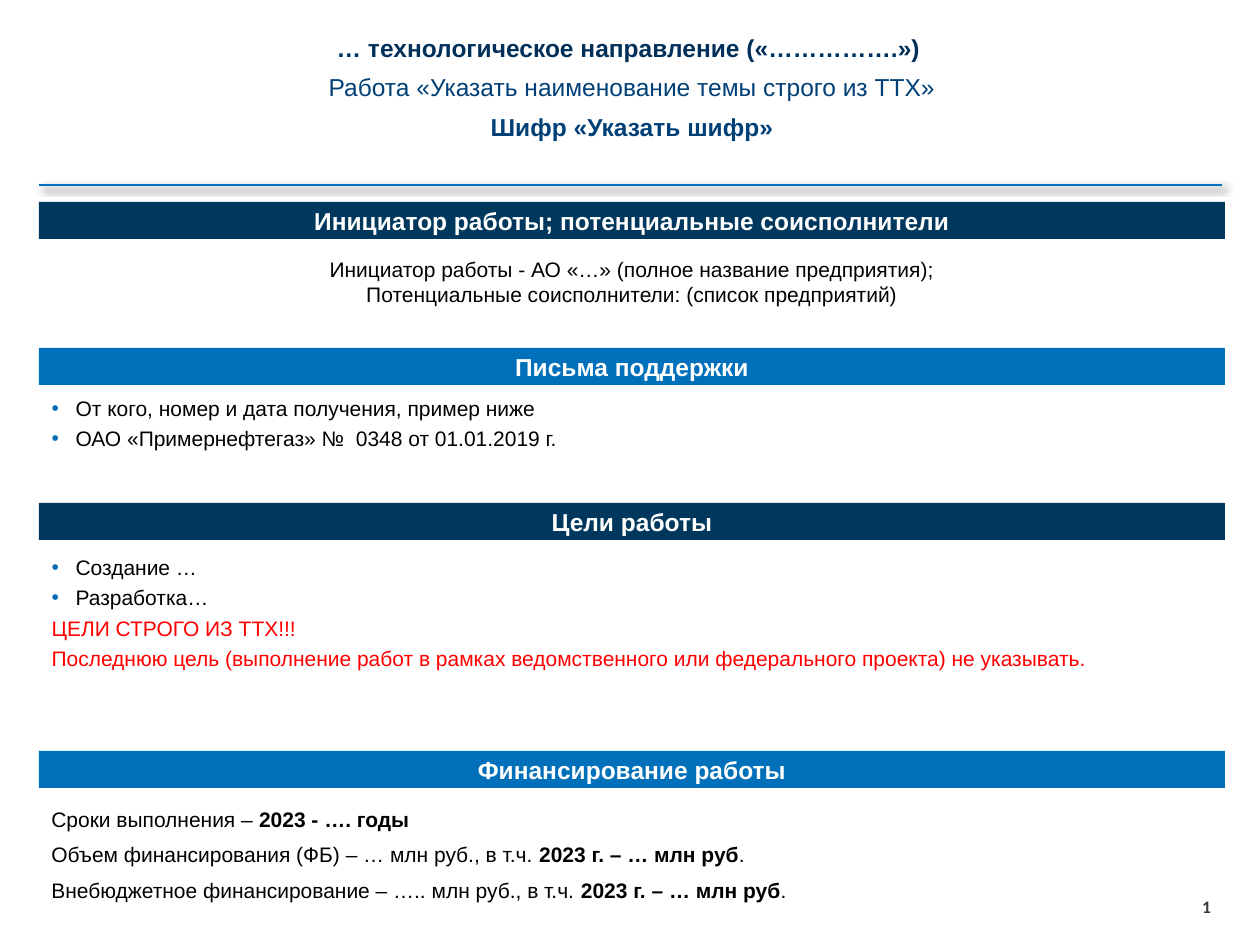
from lxml.etree import SubElement
from pptx import Presentation
from pptx.dml.color import RGBColor
from pptx.enum.shapes import MSO_CONNECTOR, MSO_SHAPE
from pptx.enum.text import MSO_ANCHOR, MSO_AUTO_SIZE, PP_ALIGN
from pptx.oxml.ns import qn
from pptx.util import Emu, Pt

SCALE = 914400 / 126
COLORS = {
    "navy": "00385D", "blue": "0070BA", "bullet": "016DB7", "title": "003059",
    "theme": "004077", "text": "000000", "warning": "FF0000",
    "white": "FFFFFF", "number": "3C3C3C",
}


def px(length):
    """Turn px into EMU."""
    return Emu(round(length * SCALE))


def color(name):
    """Look up a palette colour."""
    return RGBColor.from_string(COLORS[name])


def place(shape, box):
    """Move and size a shape to a px box."""
    shape.left, shape.top, shape.width, shape.height = map(px, box)


def set_frame(frame, anchor=MSO_ANCHOR.TOP, inset=None):
    """Set wrapping, anchor and, if given, one inset for all sides."""
    frame.word_wrap = True
    frame.auto_size = MSO_AUTO_SIZE.NONE
    frame.vertical_anchor = anchor
    if inset is not None:
        frame.margin_left = frame.margin_right = px(inset)
        frame.margin_top = frame.margin_bottom = px(inset)
    return frame


def set_bullet(paragraph, bulleted):
    """Give a paragraph a coloured bullet or none at all."""
    properties = paragraph._p.get_or_add_pPr()
    properties.set("marL", str(px(24 if bulleted else 0)))
    properties.set("indent", str(px(-24 if bulleted else 0)))
    if bulleted:
        tint = SubElement(properties, qn("a:buClr"))
        SubElement(tint, qn("a:srgbClr")).set("val", COLORS["bullet"])
        SubElement(properties, qn("a:buFont")).set("typeface", "Arial")
        SubElement(properties, qn("a:buChar")).set("char", "•")
    else:
        SubElement(properties, qn("a:buNone"))


def add_run(paragraph, text, size=12, tint="text", bold=False, font="Arial"):
    """Append one formatted run."""
    run = paragraph.add_run()
    run.text = text
    run.font.name, run.font.size, run.font.bold = font, Pt(size), bold
    run.font.color.rgb = color(tint)
    return run


def write(frame, lines, align=PP_ALIGN.LEFT, after=0, **style):
    """Write lines, each a list of (text, bold) runs."""
    for index, line in enumerate(lines):
        paragraph = frame.add_paragraph() if index else frame.paragraphs[0]
        paragraph.alignment = align
        paragraph.space_after = Pt(after if index < len(lines) - 1 else 0)
        for text, bold in line:
            add_run(paragraph, text, bold=bold, **style)


def add_text(slide, box, inset=None):
    """Add a wrapped text box and return its frame."""
    return set_frame(slide.shapes.add_textbox(*map(px, box)).text_frame, inset=inset)


def add_heading(slide, box):
    """Build the title, the theme lines and the shadowed rule."""
    left, top, width, height = box
    title = slide.shapes.title
    place(title, (left, top, width - 7, 37))
    write(set_frame(title.text_frame, MSO_ANCHOR.BOTTOM, 0),
          [[("… технологическое направление («…………….»)", True)]],
          PP_ALIGN.CENTER, size=14, tint="title")
    write(add_text(slide, (left, top + 41, width, 83)),
          [[("Работа «Указать наименование темы строго из ТТХ»", False)],
           [("Шифр «Указать шифр»", True)]],
          PP_ALIGN.CENTER, after=6, size=14, tint="theme")
    bottom = top + height
    rule = slide.shapes.add_connector(
        MSO_CONNECTOR.STRAIGHT, px(left), px(bottom), px(left + width - 3), px(bottom))
    rule.line.color.rgb = color("blue")
    rule.line.width = Pt(1.5)
    effects = SubElement(rule._element.spPr, qn("a:effectLst"))
    shadow = SubElement(effects, qn("a:outerShdw"), blurRad=str(Pt(4)),
                        dist=str(Pt(3)), dir="2700000", algn="tl", rotWithShape="0")
    shade = SubElement(shadow, qn("a:srgbClr"), val=COLORS["text"])
    SubElement(shade, qn("a:alpha"), val="40000")


def add_band(slide, box, heading, fill):
    """Build the coloured heading band at the top of a section box."""
    left, top, width, _ = box
    band = slide.shapes.add_shape(MSO_SHAPE.RECTANGLE, *map(px, (left, top, width, 37)))
    band.shadow.inherit = False
    band.fill.solid()
    band.fill.fore_color.rgb = color(fill)
    band.line.fill.background()
    write(set_frame(band.text_frame, MSO_ANCHOR.MIDDLE), [[(heading, True)]],
          PP_ALIGN.CENTER, size=14, tint="white")


def add_text_section(slide, box, heading, fill, offset, lines, **style):
    """Build a band with plain text below it."""
    left, top, width, height = box
    add_band(slide, box, heading, fill)
    write(add_text(slide, (left, top + offset, width, height - offset)), lines, **style)


def add_list_section(slide, box, heading, fill, offset, body, items, warnings=()):
    """Build a band with a list placeholder below it."""
    left, top, width, height = box
    add_band(slide, box, heading, fill)
    place(body, (left, top + offset, width, height - offset))
    frame = set_frame(body.text_frame)
    for index, text in enumerate([*items, *warnings]):
        paragraph = frame.add_paragraph() if index else frame.paragraphs[0]
        bulleted = index < len(items)
        set_bullet(paragraph, bulleted)
        paragraph.alignment = PP_ALIGN.JUSTIFY
        paragraph.space_before, paragraph.space_after = Pt(0), Pt(3)
        add_run(paragraph, text, tint="text" if bulleted else "warning")


def add_slide_number(slide, box):
    """Build the slide number as a live field."""
    paragraph = add_text(slide, box, inset=0).paragraphs[0]
    field = add_run(paragraph, "1", 10, "number", True, "Calibri")._r
    field.tag = qn("a:fld")
    field.set("id", "{B6F15528-21DE-4FAA-801E-634DDDAF4B2B}")
    field.set("type", "slidenum")


def main():
    """Build and save the slide."""
    deck = Presentation()
    deck.slide_width, deck.slide_height = px(1260), px(945)
    slide = deck.slides.add_slide(deck.slide_layouts[3])
    letters, goals = slide.placeholders[1], slide.placeholders[2]
    left, width = 39, 1186

    add_heading(slide, (left, 25, width, 160))
    add_text_section(
        slide, (left, 202, width, 110),
        "Инициатор работы; потенциальные соисполнители", "navy", 48,
        [[("Инициатор работы - АО «…» (полное название предприятия);", False)],
         [("Потенциальные соисполнители: (список предприятий)", False)]],
        align=PP_ALIGN.CENTER)
    add_list_section(
        slide, (left, 348, width, 110), "Письма поддержки", "blue", 41, letters,
        ["От кого, номер и дата получения, пример ниже",
         "ОАО «Примернефтегаз» №  0348 от 01.01.2019 г."])
    add_list_section(
        slide, (left, 503, width, 176), "Цели работы", "navy", 45, goals,
        ["Создание …", "Разработка…"],
        ["ЦЕЛИ СТРОГО ИЗ ТТХ!!!",
         "Последнюю цель (выполнение работ в рамках ведомственного "
         "или федерального проекта) не указывать."])
    year_share = [("2023 г. – … млн руб", True), (".", False)]
    add_text_section(
        slide, (left, 751, width, 160), "Финансирование работы", "blue", 49,
        [[("Сроки выполнения – ", False), ("2023 - …. годы", True)],
         [("Объем финансирования (ФБ) – … млн руб., в т.ч. ", False), *year_share],
         [("Внебюджетное финансирование – ….. млн руб., в т.ч. ", False), *year_share]],
        after=6)
    add_slide_number(slide, (1202, 896, 30, 23))
    deck.save("out.pptx")


if __name__ == "__main__":
    main()
